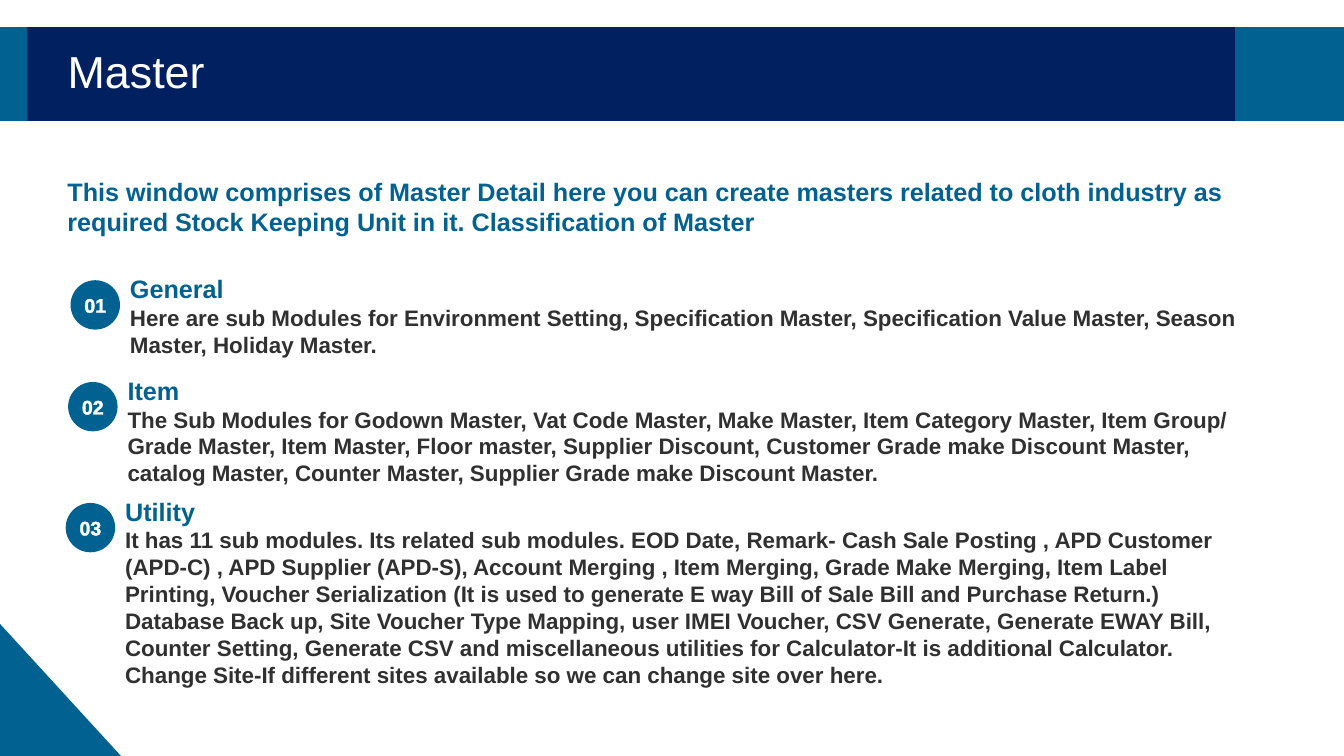
from dataclasses import dataclass

from lxml.etree import SubElement
from pptx import Presentation
from pptx.dml.color import RGBColor as RGB
from pptx.enum.shapes import MSO_SHAPE as SHAPE
from pptx.enum.text import MSO_ANCHOR as ANCHOR, MSO_AUTO_SIZE as AUTO, PP_ALIGN as ALIGN
from pptx.oxml.ns import qn
from pptx.util import Inches, Pt

W, H = Inches(13.33), Inches(7.5)


@dataclass(frozen=True)
class Theme:
    font: str = "Arial"
    navy: str = "002060"
    blue: str = "016191"
    dark: str = "303030"
    white: str = "FFFFFF"
    title: int = 32
    heading: int = 18
    body: int = 16
    number: int = 14


T = Theme()
MARGIN = 4.28
BAND_TOP, BAND_HEIGHT = 3.6, 12.4
BADGE_W, BADGE_H = 3.68, 6.53
BADGE_DROP = 1.53
HEADING_H, LINE_H = 5.33, 3.6

INTRO = ("This window comprises of Master Detail here you can create masters related to cloth "
         "industry as required Stock Keeping Unit in it. Classification of Master")

# top (percent of height), lines of body text, heading, body
SECTIONS = [
    (35.54, 2, "General",
     "Here are sub Modules for Environment Setting, Specification Master, Specification Value "
     "Master, Season Master, Holiday Master."),
    (49, 3, "Item",
     "The Sub Modules for Godown Master, Vat Code Master, Make Master, Item Category Master, "
     "Item Group/ Grade Master, Item Master, Floor master, Supplier Discount, Customer Grade "
     "make Discount Master, catalog Master, Counter Master, Supplier Grade make Discount Master."),
    (65, 6, "Utility",
     "It has 11 sub modules. Its related sub modules. EOD Date, Remark- Cash Sale Posting , "
     "APD Customer (APD-C) , APD Supplier (APD-S), Account Merging , Item Merging, Grade Make "
     "Merging, Item Label Printing, Voucher Serialization (It is used to generate E way Bill of "
     "Sale Bill and Purchase Return.) Database Back up, Site Voucher Type Mapping, user IMEI "
     "Voucher, CSV Generate, Generate EWAY Bill, Counter Setting, Generate CSV and miscellaneous "
     "utilities for Calculator-It is additional Calculator. Change Site-If different sites "
     "available so we can change site over here."),
]


def box(x, y, w, h):
    """Turn percentages of the slide's width and height into lengths."""
    return tuple(round(v * side / 100) for v, side in zip((x, y, w, h), (W, H, W, H)))


def write(p, text, size, color, bold=True):
    p.text = text
    p.font.name = T.font
    p.font.size = Pt(size)
    p.font.bold = bold
    p.font.color.rgb = RGB.from_string(color)


def add_block(s, kind, area, color):
    sp = s.shapes.add_shape(kind, *box(*area))
    sp.shadow.inherit = False
    sp.fill.solid()
    sp.fill.fore_color.rgb = RGB.from_string(color)
    sp.line.fill.background()
    return sp


def add_text(s, area, *paragraphs):
    """Add a wrapped text box; each paragraph is (text, size, color)."""
    tf = s.shapes.add_textbox(*box(*area)).text_frame
    tf.word_wrap = True
    for i, paragraph in enumerate(paragraphs):
        write(tf.add_paragraph() if i else tf.paragraphs[0], *paragraph)


def outline_text(r, color):
    ln = SubElement(r.font._element, qn("a:ln"), w=str(Pt(1)))
    fill = SubElement(ln, qn("a:solidFill"))
    SubElement(fill, qn("a:srgbClr"), val=color)


def add_badge(s, x, y, number):
    tf = add_block(s, SHAPE.OVAL, (x, y, BADGE_W, BADGE_H), T.blue).text_frame
    tf.margin_left = tf.margin_right = tf.margin_top = tf.margin_bottom = 0
    tf.vertical_anchor = ANCHOR.MIDDLE
    tf.word_wrap = False
    p = tf.paragraphs[0]
    p.alignment = ALIGN.CENTER
    write(p, f"{number:02}", T.number, T.white)
    outline_text(p.runs[0], T.white)


def add_section(s, number, top, lines, heading, body):
    x = 5.25 - 0.18 * (number - 1)
    add_badge(s, x, top + BADGE_DROP, number)
    add_text(s, (x + BADGE_W, top, 85.75, HEADING_H + LINE_H * lines),
             (heading, T.heading, T.blue), (body, T.body, T.dark))


def set_title(s, text):
    """Place the title over the band, in front of the shapes drawn so far."""
    sp = s.shapes.title
    sp.left, sp.top, sp.width, sp.height = box(MARGIN, 6.13, 72.77, 7.2)
    tf = sp.text_frame
    tf.vertical_anchor = ANCHOR.MIDDLE
    tf.auto_size = AUTO.NONE
    p = tf.paragraphs[0]
    write(p, text, T.title, T.white, bold=False)
    p.alignment = ALIGN.LEFT
    p.line_spacing = 0.9
    sp.element.getparent().append(sp.element)


def main():
    prs = Presentation()
    prs.slide_width, prs.slide_height = W, H
    s = prs.slides.add_slide(prs.slide_layouts.get_by_name("Title Only"))
    for x, w, color in ((0, 100, T.navy), (0, 2.03, T.blue), (91.9, 8.1, T.blue)):
        add_block(s, SHAPE.RECTANGLE, (x, BAND_TOP, w, BAND_HEIGHT), color)
    set_title(s, "Master")
    add_text(s, (MARGIN, 22.67, 90.4, 9.47), (INTRO, T.heading, T.blue))
    for number, section in enumerate(SECTIONS, 1):
        add_section(s, number, *section)
    add_block(s, SHAPE.RIGHT_TRIANGLE, (0, 82.53, 9, 17.47), T.blue)
    prs.save("out.pptx")


if __name__ == "__main__":
    main()
